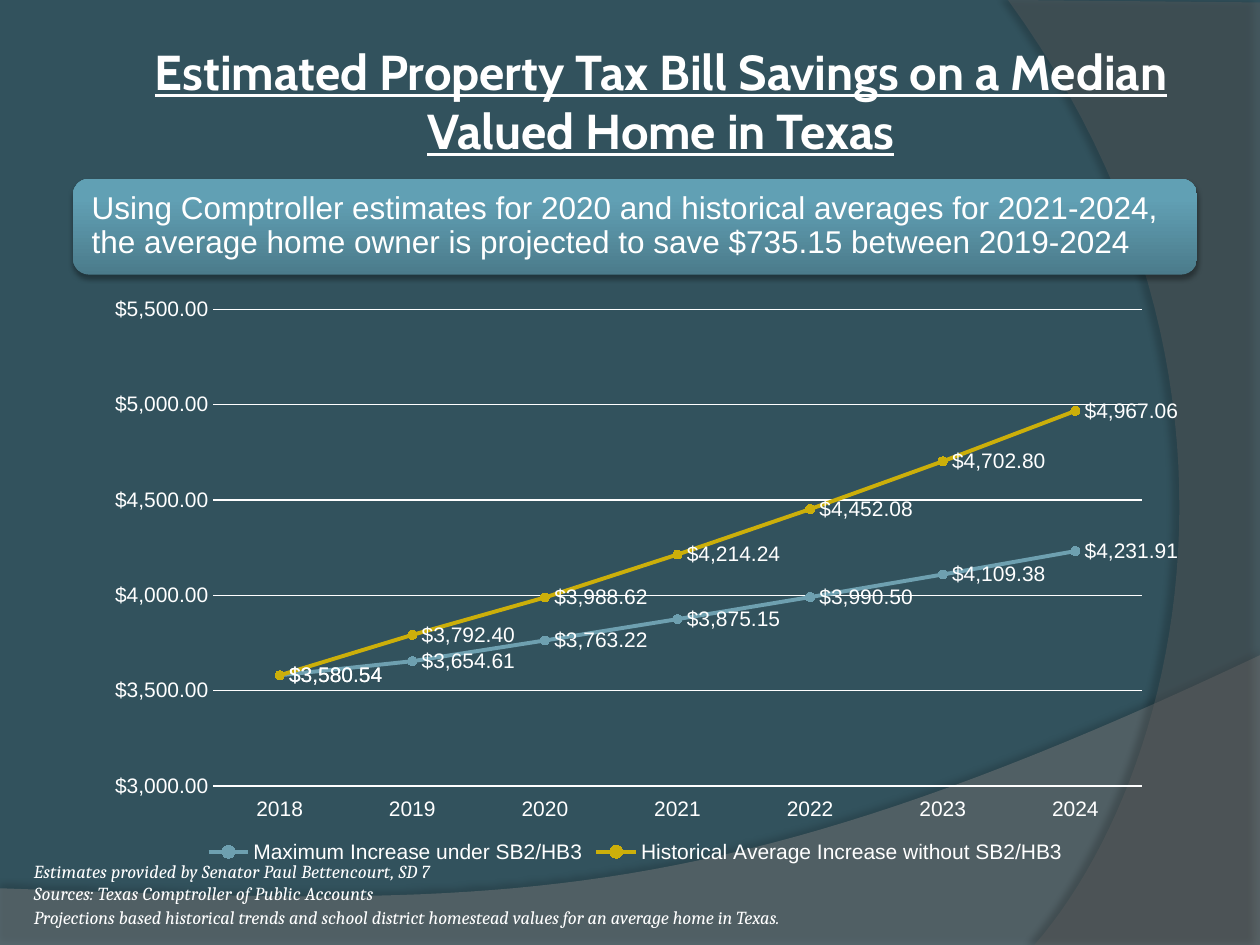
from lxml import etree
from pptx import Presentation
from pptx import util as u
from pptx.chart.data import CategoryChartData
from pptx.dml.color import RGBColor
from pptx.enum import chart as ch, shapes, text
from pptx.oxml import parse_xml
from pptx.oxml.ns import nsdecls, qn

Inches, Pt = u.Inches, u.Pt
WHITE = "FFFFFF"
MONEY = '"$"#,##0.00'


def rgb(value):
    return RGBColor.from_string(value)


def add_shadow(sp, alpha, blur, dist, angle):
    sp.shadow.inherit = False
    effects = sp._element.spPr.find(qn("a:effectLst"))
    effects.append(parse_xml(
        f'<a:outerShdw {nsdecls("a")} blurRad="{Pt(blur)}" dist="{Pt(dist)}" '
        f'dir="{angle * 60000}" algn="ctr" rotWithShape="0"><a:srgbClr val="000000">'
        f'<a:alpha val="{alpha * 1000}"/></a:srgbClr></a:outerShdw>'))


prs = Presentation()
prs.slide_width, prs.slide_height = Inches(10), Inches(7.5)
s = prs.slides.add_slide(prs.slide_layouts[6])
s.background.fill.solid()
s.background.fill.fore_color.rgb = rgb("32525D")

# Background waves: straight corners, then one Bezier edge
waves = [
    ([(0, 7.05), (0, 7.51), (10, 7.51), (10, 5.2)],
     [(10, 5.2), (5.59, 7.29), (3.91, 7.19), (0, 7.05)],
     "7F7F7F", 45, (35, 4, 3.5, 270)),
    ([(8, 0), (10, 0.02), (10, 7.5), (8.21, 7.5)],
     [(8.21, 7.5), (9.35, 6.19), (10.18, 3), (8, 0)],
     "5E5E5E", 40, (45, 4, 4, 180)),
]
STEPS = 48
for corners, curve, color, alpha, shadow in waves:
    points = list(corners)
    for i in range(1, STEPS):
        t = i / STEPS
        weights = ((1 - t) ** 3, 3 * t * (1 - t) ** 2, 3 * t * t * (1 - t), t ** 3)
        points.append(tuple(sum(w * pt[k] for w, pt in zip(weights, curve)) for k in (0, 1)))
    points = [(Inches(x), Inches(y)) for x, y in points]
    builder = s.shapes.build_freeform(*points[0], scale=1.0)
    builder.add_line_segments(points[1:], close=True)
    sp = builder.convert_to_shape()
    sp.fill.solid()
    sp.fill.fore_color.rgb = rgb(color)
    clr = sp._element.spPr.find(qn("a:solidFill"))[0]
    etree.SubElement(clr, qn("a:alpha")).set("val", str(alpha * 1000))
    sp.line.fill.background()
    add_shadow(sp, *shadow)

# Summary banner
banner = s.shapes.add_shape(shapes.MSO_SHAPE.ROUNDED_RECTANGLE, Inches(0.58), Inches(1.42),
                            Inches(8.92), Inches(0.76))
banner.fill.gradient()
banner.fill.gradient_angle = 90
for stop, position, color in zip(banner.fill.gradient_stops, (0, 0.8), ("4B7B8B", "61A0B4")):
    stop.position = position
    stop.color.rgb = rgb(color)
banner.line.fill.background()
add_shadow(banner, 35, 3.1, 1.8, 90)

# Chart
data = CategoryChartData(number_format=MONEY)
data.categories = [str(year) for year in range(2018, 2025)]
data.add_series("Maximum Increase under SB2/HB3",
                (3580.54, 3654.61, 3763.22, 3875.15, 3990.50, 4109.38, 4231.91))
data.add_series("Historical Average Increase without SB2/HB3",
                (3580.54, 3792.40, 3988.62, 4214.24, 4452.08, 4702.80, 4967.06))
chart = s.shapes.add_chart(ch.XL_CHART_TYPE.LINE_MARKERS, Inches(0.67), Inches(2.28),
                           Inches(8.75), Inches(4.61), data).chart
chart.has_title = False
chart.font.name, chart.font.size = "Arial", Pt(12)
chart.font.color.rgb = rgb(WHITE)
chart.has_legend = True
chart.legend.position = ch.XL_LEGEND_POSITION.BOTTOM
chart.legend.include_in_layout = False

cat, val = chart.category_axis, chart.value_axis
for axis in (cat, val):
    axis.major_tick_mark = axis.minor_tick_mark = ch.XL_TICK_MARK.NONE
cat.tick_label_position = ch.XL_TICK_LABEL_POSITION.LOW
val.minimum_scale, val.maximum_scale, val.major_unit = 3000, 5500, 500
val.crosses_at = 3500
val.tick_labels.number_format = MONEY
val.tick_labels.number_format_is_linked = False
val.format.line.fill.background()
for line in (cat.format.line, val.major_gridlines.format.line):
    line.color.rgb = rgb(WHITE)
    line.width = Pt(0.75)

for series, color in zip(chart.plots[0].series, ("6EA0B0", "CCAF0A")):
    series.smooth = False
    series.format.line.color.rgb = rgb(color)
    series.format.line.width = Pt(2.25)
    marker = series.marker
    marker.style, marker.size = ch.XL_MARKER_STYLE.CIRCLE, 5
    marker.format.fill.solid()
    marker.format.fill.fore_color.rgb = rgb(color)
    marker.format.line.color.rgb = rgb(color)
    labels = series.data_labels
    labels.show_value = True
    labels.position = ch.XL_LABEL_POSITION.RIGHT
    labels.number_format, labels.number_format_is_linked = MONEY, False
    labels.font.name, labels.font.size = "Arial", Pt(12)
    labels.font.color.rgb = rgb(WHITE)

# Fixed inner plot area, leaving room for the last labels
plot_area = chart._chartSpace.chart.plotArea
for old in plot_area.findall(qn("c:layout")):
    plot_area.remove(old)
layout = etree.Element(qn("c:layout"))
manual = etree.SubElement(layout, qn("c:manualLayout"))
for tag, value in (("layoutTarget", "inner"), ("xMode", "edge"), ("yMode", "edge"),
                   ("x", "0.117"), ("y", "0.038"), ("w", "0.842"), ("h", "0.821")):
    etree.SubElement(manual, qn(f"c:{tag}")).set("val", value)
plot_area.insert(0, layout)

# Title, banner text and footnotes
title = s.shapes.add_textbox(Inches(1.16), Inches(0.17), Inches(8.17), Inches(1.25))
credits = s.shapes.add_textbox(Inches(0.16), Inches(6.78), Inches(3.59), Inches(0.45))
basis = s.shapes.add_textbox(Inches(0.16), Inches(7.14), Inches(6.68), Inches(0.28))
note = {"name": "Cambria", "size": Pt(10.5), "italic": True}
left, center = text.PP_ALIGN.LEFT, text.PP_ALIGN.CENTER
top, middle = text.MSO_ANCHOR.TOP, text.MSO_ANCHOR.MIDDLE
texts = [
    (title, "Estimated Property Tax Bill Savings on a Median Valued Home in Texas",
     {"name": "Cabin", "size": Pt(28), "bold": True, "underline": True},
     center, middle, 0.05, 0.05, 1, 0),
    (banner, "Using Comptroller estimates for 2020 and historical averages for 2021-2024, "
     "the average home owner is projected to save $735.15 between 2019-2024",
     {"name": "Arial", "size": Pt(18)}, left, middle, 0.11, 0.07, 0.9, 0),
    (credits, "Estimates provided by Senator Paul Bettencourt, SD 7\v"
     "Sources: Texas Comptroller of Public Accounts", note, left, top, 0.11, 0.05, 1, 10),
    (basis, "Projections based historical trends and school district homestead values "
     "for an average home in Texas.", note, left, top, 0.11, 0.05, 1, 0),
]
for sp, words, fmt, align, anchor, side, edge, spacing, tracking in texts:
    tf = sp.text_frame
    tf.word_wrap, tf.vertical_anchor = True, anchor
    tf.margin_left = tf.margin_right = Inches(side)
    tf.margin_top = tf.margin_bottom = Inches(edge)
    p = tf.paragraphs[0]
    p.text, p.alignment, p.line_spacing = words, align, spacing
    for r in p.runs:
        for key, value in fmt.items():
            setattr(r.font, key, value)
        r.font.color.rgb = rgb(WHITE)
        if tracking:
            r._r.get_or_add_rPr().set("spc", str(tracking))

prs.save("out.pptx")
